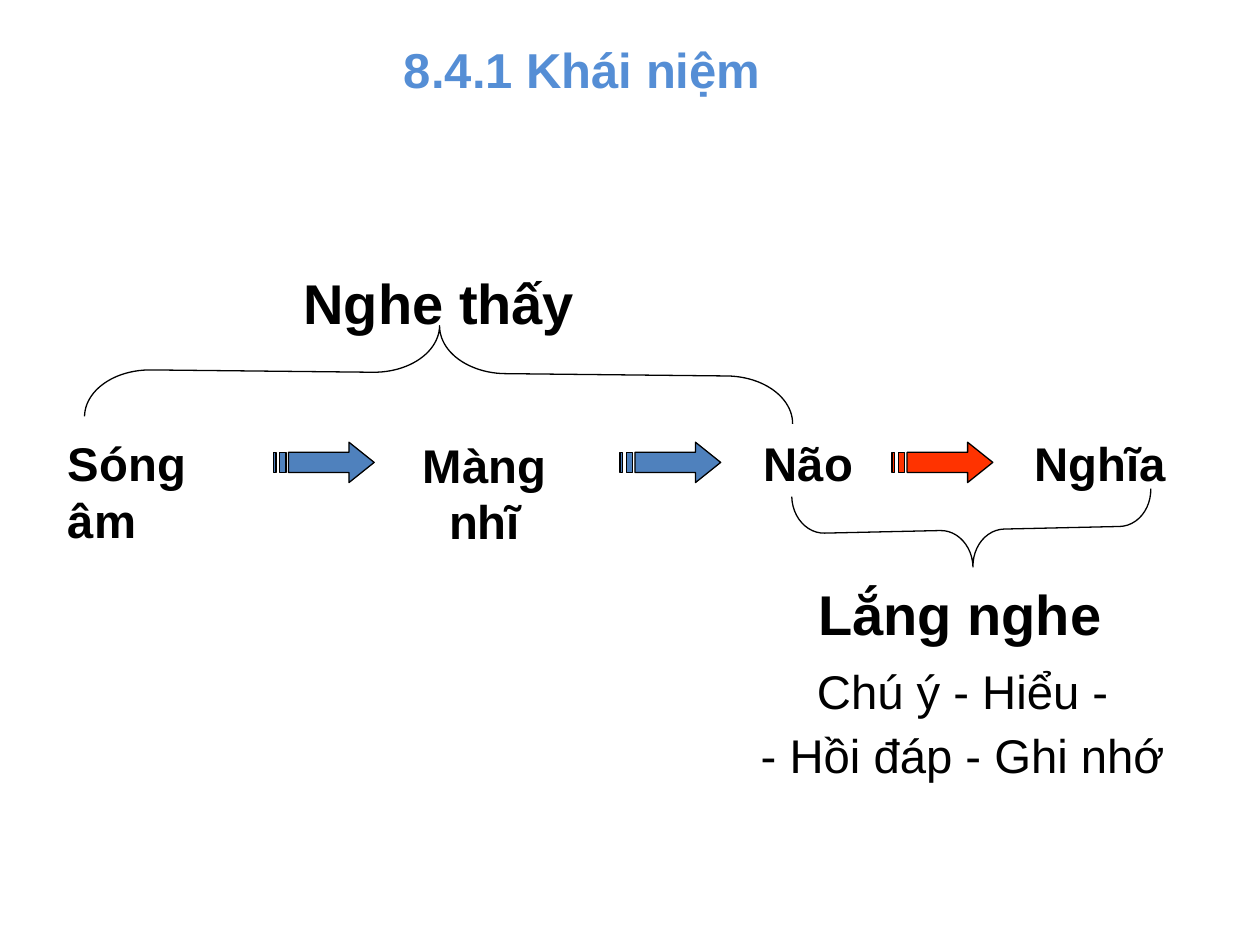
from dataclasses import dataclass

from pptx import Presentation
from pptx import util as u
from pptx.dml import color
from pptx.enum import shapes, text

BLACK, TITLE_BLUE, ARROW_BLUE, ARROW_RED = "000000", "558ED5", "4F81BD", "FF3300"
LEFT, CENTER = text.PP_ALIGN.LEFT, text.PP_ALIGN.CENTER
TOP, MIDDLE = text.MSO_ANCHOR.TOP, text.MSO_ANCHOR.MIDDLE
ARROW_TOP = 3.51
ARROW_CONTOURS = [
    [(60, 0), (60, 8), (12, 8), (12, 24), (60, 24), (60, 32), (80, 16)],
    [(5, 8), (5, 24), (10, 24), (10, 8)],
    [(0, 8), (0, 24), (2, 24), (2, 8)],
]


@dataclass
class Label:
    lines: list[str]
    box: tuple[float, float, float, float]
    size: int = 27
    bold: bool = True
    ink: str = BLACK
    align: text.PP_ALIGN = CENTER
    anchor: text.MSO_ANCHOR = TOP
    spacing: tuple[float, ...] = (1.0,)
    gap: float = 0


@dataclass
class Arrow:
    left: float
    fill: str


@dataclass
class Brace:
    box: tuple[float, float, float, float]
    rotation: float
    curl: float


LABELS = [
    Label(["8.4.1 Khái niệm"], (3.08, 0.17, 3.08, 0.75), 28, ink=TITLE_BLUE, anchor=MIDDLE),
    Label(["Sóng âm"], (0.44, 3.4, 1.69, 0.55), align=LEFT),
    Label(["Màng nhĩ"], (2.97, 3.41, 1.75, 0.55)),
    Label(["Não"], (5.83, 3.4, 1.17, 0.55)),
    Label(["Nghĩa"], (8.11, 3.4, 1.25, 0.55), align=LEFT),
    Label(["Nghe thấy"], (2.1, 2.08, 2.77, 0.63), 32),
    Label(["Lắng nghe"], (5.83, 4.5, 3.58, 0.69), 32, spacing=(1.1,)),
    Label(["Chú ý - Hiểu -", "- Hồi đáp - Ghi nhớ"], (5.85, 5.16, 3.58, 1.09),
          bold=False, spacing=(1.1, 0.6), gap=15.5),
]
ARROWS = [Arrow(2.17, ARROW_BLUE), Arrow(4.92, ARROW_BLUE), Arrow(7.08, ARROW_RED)]
BRACES = [
    Brace((3.11, 0.15, 0.75, 5.62), 270.6, 0.7),
    Brace((7.42, 2.78, 0.59, 2.85), 88.7, 0.43),
]


def rgb(value: str) -> color.RGBColor:
    return color.RGBColor.from_string(value)


def apply(target, values: dict) -> None:
    for name, value in values.items():
        setattr(target, name, value)


def outline(shape) -> None:
    shape.shadow.inherit = False
    shape.line.color.rgb = rgb(BLACK)
    shape.line.width = u.Pt(0.75)


def draw_label(slide, label: Label) -> None:
    frame = slide.shapes.add_textbox(*map(u.Inches, label.box)).text_frame
    apply(frame, {"word_wrap": True, "vertical_anchor": label.anchor})
    frame.text = "\n".join(label.lines)
    for index, (line, spacing) in enumerate(zip(frame.paragraphs, label.spacing)):
        apply(line, {"alignment": label.align, "line_spacing": spacing,
                     "space_before": u.Pt(label.gap if index else 0)})
        font = line.runs[0].font
        apply(font, {"name": "Arial", "size": u.Pt(label.size), "bold": label.bold})
        font.color.rgb = rgb(label.ink)


def draw_arrow(slide, arrow: Arrow) -> None:
    head, *stripes = ARROW_CONTOURS
    builder = slide.shapes.build_freeform(*head[0], scale=u.Inches(0.01))
    builder.add_line_segments(head[1:], close=True)
    for stripe in stripes:
        builder.move_to(*stripe[0])
        builder.add_line_segments(stripe[1:], close=True)
    shape = builder.convert_to_shape(u.Inches(arrow.left), u.Inches(ARROW_TOP))
    shape.fill.solid()
    shape.fill.fore_color.rgb = rgb(arrow.fill)
    outline(shape)


def draw_brace(slide, brace: Brace) -> None:
    shape = slide.shapes.add_shape(shapes.MSO_SHAPE.RIGHT_BRACE, *map(u.Inches, brace.box))
    shape.rotation = brace.rotation
    shape.adjustments[0] = brace.curl
    shape.fill.background()
    outline(shape)


def main() -> None:
    """Build the slide on hearing versus listening."""
    deck = Presentation()
    apply(deck, {"slide_width": u.Inches(10), "slide_height": u.Inches(7.5)})
    slide = deck.slides.add_slide(deck.slide_layouts[6])
    for arrow in ARROWS:
        draw_arrow(slide, arrow)
    for brace in BRACES:
        draw_brace(slide, brace)
    for label in LABELS:
        draw_label(slide, label)
    deck.save("out.pptx")


if __name__ == "__main__":
    main()
